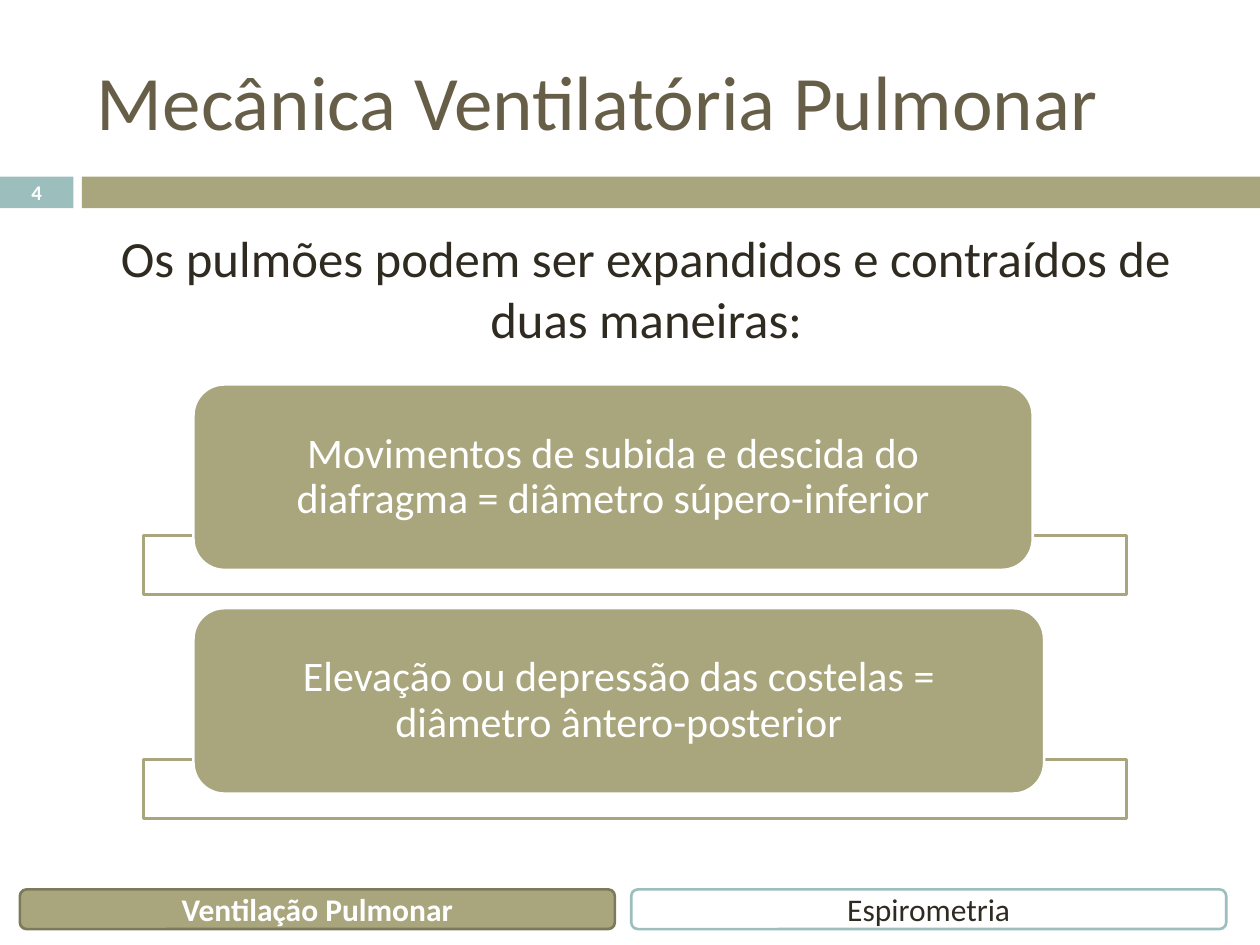
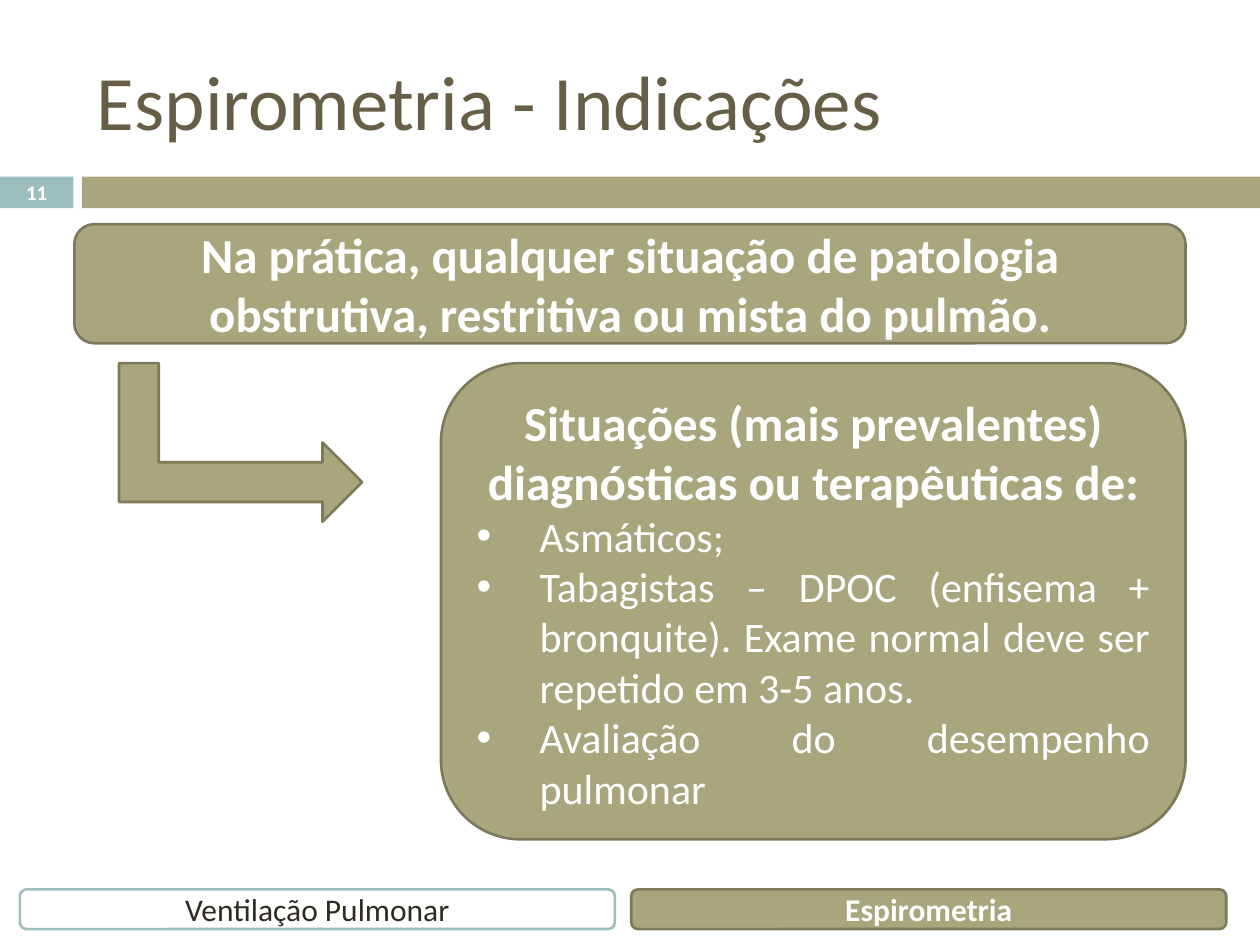
from lxml import etree
from pptx import Presentation
from pptx.dml.color import RGBColor
from pptx.enum.shapes import MSO_SHAPE
from pptx.enum.text import MSO_ANCHOR, MSO_AUTO_SIZE, PP_ALIGN
from pptx.oxml.ns import qn
from pptx.util import Cm, Pt

RECT = MSO_SHAPE.RECTANGLE
ROUND = MSO_SHAPE.ROUNDED_RECTANGLE
ARROW = MSO_SHAPE.BENT_UP_ARROW
TOP, MIDDLE = MSO_ANCHOR.TOP, MSO_ANCHOR.MIDDLE
LEFT, CENTER, JUSTIFY = PP_ALIGN.LEFT, PP_ALIGN.CENTER, PP_ALIGN.JUSTIFY
NO_FIT = MSO_AUTO_SIZE.NONE

WHITE = RGBColor(0xFF, 0xFF, 0xFF)
OLIVE = RGBColor(0xA9, 0xA5, 0x7C)
MOSS = RGBColor(0x7D, 0x7A, 0x5C)
TEAL = RGBColor(0x9C, 0xBE, 0xBD)
BROWN = RGBColor(0x67, 0x5E, 0x47)
DARK = RGBColor(0x2F, 0x2B, 0x20)

FONT = "Calibri"
WIDE = 25.4
TABS = ("Ventilação Pulmonar", "Espirometria")


def place(shape, box):
    shape.left, shape.top, shape.width, shape.height = map(Cm, box)


def style(para, size, color=WHITE, bold=False, align=CENTER):
    para.alignment = align
    font = para.font
    font.name, font.size, font.bold = FONT, Pt(size), bold
    font.color.rgb = color


def add_box(slide, box, fill, line=None, kind=ROUND):
    shape = slide.shapes.add_shape(kind, *map(Cm, box))
    shape.shadow.inherit = False
    shape.fill.solid()
    shape.fill.fore_color.rgb = fill
    if line is None:
        shape.line.fill.background()
    else:
        shape.line.color.rgb = line
        shape.line.width = Pt(1.5)
    return shape


def write(shape, text, size, color=WHITE, bold=False):
    frame = shape.text_frame
    frame.word_wrap = True
    frame.vertical_anchor = MIDDLE
    frame.text = text
    style(frame.paragraphs[0], size, color, bold)
    return frame


def set_list(para, indent, mark=None):
    props = para._p.get_or_add_pPr()
    props.set("marL", str(Cm(indent)))
    props.set("indent", str(-Cm(indent)))
    if mark:
        etree.SubElement(props, qn("a:buFont")).set("typeface", "Arial")
        etree.SubElement(props, qn("a:buChar")).set("char", mark)
    else:
        etree.SubElement(props, qn("a:buNone"))


def add_title(slide, text, box):
    title = slide.shapes.title
    place(title, box)
    frame = title.text_frame
    frame.text = text
    frame.auto_size = NO_FIT
    frame.vertical_anchor = MIDDLE
    style(frame.paragraphs[0], 44, BROWN, align=LEFT)


def add_band(slide, page, box):
    left, top, width, height = box
    badge, gap = 1.48, 0.17
    label = add_box(slide, (left, top, badge, height), TEAL, kind=RECT)
    frame = write(label, str(page), 11.9, bold=True)
    frame.margin_top = frame.margin_bottom = 0
    start = badge + gap
    add_box(slide, (left + start, top, width - start, height), OLIVE, kind=RECT)


def add_tabs(slide, active, box):
    left, top, width, height = box
    gap = 0.33
    each = (width - gap) / len(TABS)
    for i, name in enumerate(TABS):
        on = i == active
        tab = add_box(slide, (left + i * (each + gap), top, each, height),
                      OLIVE if on else WHITE, MOSS if on else TEAL)
        write(tab, name, 18, WHITE if on else DARK, on)


def add_page(deck, layout, title, page, active):
    slide = deck.slides.add_slide(deck.slide_layouts[layout])
    add_title(slide, title, (1.7, 0.64, 22.66, 2.74))
    add_band(slide, page, (0, 3.56, WIDE, 0.64))
    add_tabs(slide, active, (0.4, 17.93, 24.32, 0.8))
    return slide


def add_lead(slide, text, box):
    body = slide.placeholders[1]
    place(body, box)
    frame = body.text_frame
    frame.text = text
    frame.auto_size = NO_FIT
    frame.vertical_anchor = TOP
    para = frame.paragraphs[0]
    style(para, 29, DARK)
    para.space_before = Pt(7)
    set_list(para, 0)


def add_ways(slide, ways, box):
    left, top, width, height = box
    step = height / len(ways)
    for i, (text, wide) in enumerate(ways):
        y = top + i * step
        add_box(slide, (left, y + 3.05, width, 1.19), WHITE, OLIVE, RECT)
        way = add_box(slide, (left + 1, y, wide, 3.74), OLIVE, WHITE)
        frame = write(way, text, 24)
        frame.margin_left = frame.margin_right = Cm(0.53)
        frame.margin_top = frame.margin_bottom = 0
        frame.paragraphs[0].line_spacing = 0.9


def add_cases(slide, head, cases, box):
    panel = add_box(slide, box, OLIVE, MOSS)
    frame = write(panel, head, 28, bold=True)
    frame.vertical_anchor = TOP
    for case in cases:
        para = frame.add_paragraph()
        para.text = case
        style(para, 24, align=JUSTIFY)
        set_list(para, 1.27, "•")


def add_arrow(slide, box):
    left, top, width, height = box
    shift = (width - height) / 2
    arrow = add_box(slide, (left + shift, top - shift, height, width),
                    OLIVE, MOSS, ARROW)
    arrow.rotation = 90


def build_lungs(deck):
    slide = add_page(deck, 1, "Mecânica Ventilatória Pulmonar", 4, 0)
    add_lead(slide, "Os pulmões podem ser expandidos e contraídos de duas "
             "maneiras:", (1.7, 4.45, 22.66, 2.7))
    add_ways(slide, (
        ("Movimentos de subida e descida do diafragma = "
         "diâmetro súpero-inferior", 16.92),
        ("Elevação ou depressão das costelas = "
         "diâmetro ântero-posterior", 17.15),
    ), (2.9, 7.75, 19.81, 9.02))


def build_uses(deck):
    slide = add_page(deck, 5, "Espirometria - Indicações", 11, 1)
    rule = add_box(slide, (1.5, 4.52, 22.4, 2.4), OLIVE, MOSS)
    write(rule, "Na prática, qualquer situação de patologia obstrutiva, "
          "restritiva ou mista do pulmão.", 28, bold=True)
    add_arrow(slide, (2.4, 7.32, 4.9, 3.2))
    add_cases(slide, "Situações (mais prevalentes) diagnósticas ou "
              "terapêuticas de:", (
                  "Asmáticos;",
                  "Tabagistas – DPOC (enfisema + bronquite). Exame normal "
                  "deve ser repetido em 3-5 anos.",
                  "Avaliação do desempenho pulmonar",
              ), (8.89, 7.32, 15.01, 9.6))


def main():
    deck = Presentation()
    deck.slide_width, deck.slide_height = Cm(WIDE), Cm(19.05)
    build_lungs(deck)
    build_uses(deck)
    deck.save("out.pptx")


if __name__ == "__main__":
    main()
